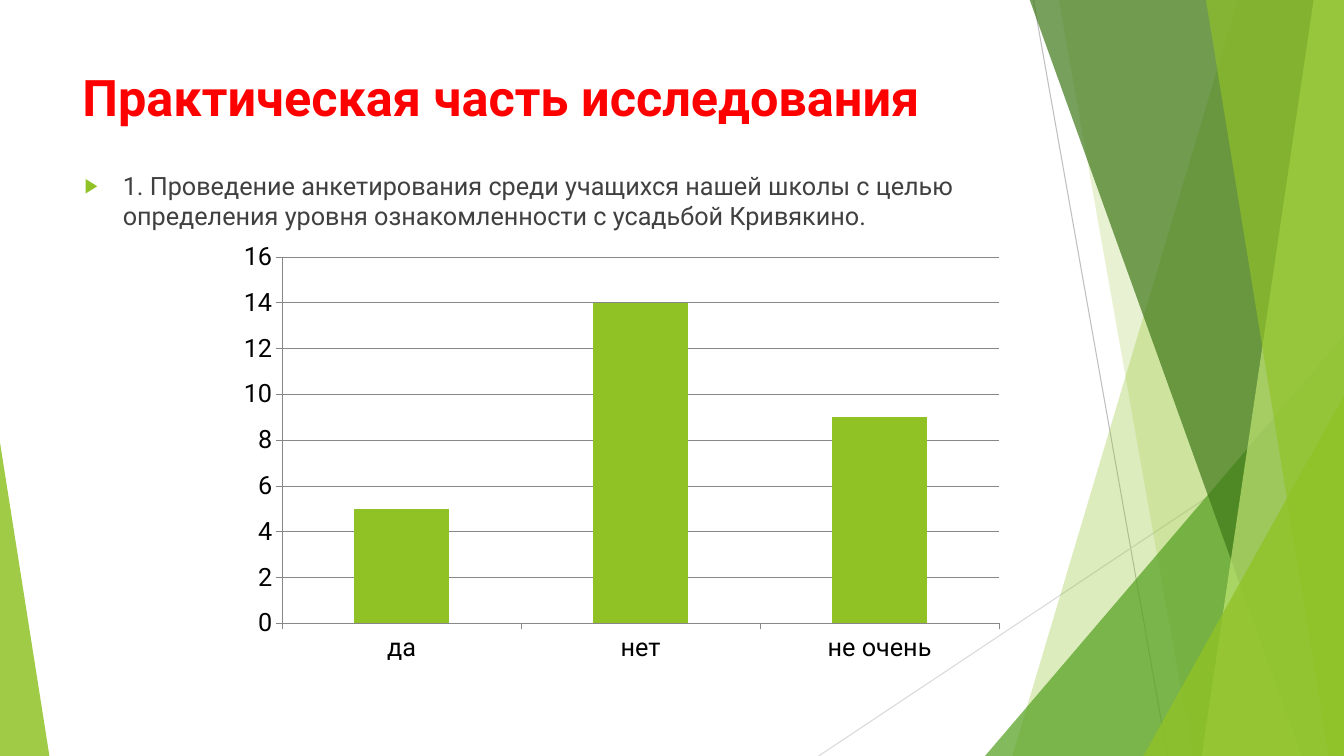
from lxml import etree
from pptx import Presentation
from pptx.chart.data import CategoryChartData
from pptx.dml.color import RGBColor
from pptx.enum.chart import XL_CHART_TYPE, XL_TICK_MARK
from pptx.enum.shapes import MSO_CONNECTOR, MSO_SHAPE
from pptx.enum.text import MSO_ANCHOR
from pptx.oxml import parse_xml
from pptx.oxml.ns import nsdecls, qn
from pptx.util import Inches, Pt

FONT = "Roboto"
WIDTH, HEIGHT, TOP = 13.33, 7.5, -0.01
COLORS = {
    "lime": "90C226", "green": "54A021", "dark_green": "3F7819",
    "pale_lime": "C0E474", "red": "FF0000", "text": "404040",
    "black": "000000", "axis": "878787",
    "line": "BFBFBF", "light_line": "D9D9D9",
}


def rgb(name):
    return RGBColor.from_string(COLORS[name])


def style_facet(shape, color, opacity):
    """Give a decorative shape a translucent fill without outline or shadow."""
    shape.shadow.inherit = False
    shape.line.fill.background()
    shape.fill.solid()
    shape.fill.fore_color.rgb = rgb(color)
    color_element = shape.fill._xPr.find(".//" + qn("a:srgbClr"))
    alpha = etree.SubElement(color_element, qn("a:alpha"))
    alpha.set("val", str(opacity * 1000))


def add_thin_line(slide, start, end, color):
    connector = slide.shapes.add_connector(
        MSO_CONNECTOR.STRAIGHT, *(Inches(value) for value in start + end))
    connector.line.color.rgb = rgb(color)
    connector.line.width = Pt(0.75)
    etree.SubElement(connector._element.spPr, qn("a:effectLst"))


def add_edge_facet(slide, top_x, bottom_x, color, opacity):
    """Fill the area between a slanted edge and the right side of the slide."""
    corners = [(top_x, TOP), (WIDTH, TOP), (WIDTH, HEIGHT), (bottom_x, HEIGHT)]
    points = [(Inches(x), Inches(y)) for x, y in corners]
    builder = slide.shapes.build_freeform(*points[0])
    builder.add_line_segments(points[1:], close=True)
    style_facet(builder.convert_to_shape(), color, opacity)


def add_corner_triangle(slide, left, top, width, apex, color, opacity):
    """Add a triangle standing on the lower edge of the slide."""
    shape = slide.shapes.add_shape(
        MSO_SHAPE.ISOSCELES_TRIANGLE, Inches(left), Inches(top),
        Inches(width), Inches(HEIGHT - top))
    shape.adjustments[0] = apex
    style_facet(shape, color, opacity)


def add_decoration(slide):
    add_thin_line(slide, (10.25, 0), (11.58, HEIGHT), "line")
    add_thin_line(slide, (WIDTH, 4.03), (8.12, HEIGHT), "light_line")
    add_edge_facet(slide, 12.28, 10.04, "lime", 30)
    add_edge_facet(slide, 10.5, 11.83, "lime", 20)
    add_corner_triangle(slide, 9.77, 3.33, 3.56, 1, "green", 72)
    add_edge_facet(slide, 10.21, 12.91, "dark_green", 70)
    add_edge_facet(slide, 13.03, 11.92, "pale_lime", 70)
    add_edge_facet(slide, 11.96, 13.18, "lime", 65)
    add_corner_triangle(slide, 11.34, 3.93, 1.99, 1, "lime", 80)
    add_corner_triangle(slide, 0, 4.39, 0.49, 0, "lime", 85)


def add_text(slide, text, left, top, width, height, size, color, bold=False):
    text_box = slide.shapes.add_textbox(
        Inches(left), Inches(top), Inches(width), Inches(height))
    text_frame = text_box.text_frame
    text_frame.word_wrap = True
    text_frame.vertical_anchor = MSO_ANCHOR.TOP
    text_frame.text = text
    paragraph = text_frame.paragraphs[0]
    font = paragraph.runs[0].font
    font.name, font.size, font.bold = FONT, Pt(size), bold
    font.color.rgb = rgb(color)
    return paragraph


def add_bullet(paragraph):
    paragraph.space_before = Pt(10)
    properties = paragraph._p.get_or_add_pPr()
    properties.set("marL", str(Inches(0.38)))
    properties.set("indent", str(Inches(-0.38)))
    for xml in (
        f'<a:buClr {nsdecls("a")}><a:srgbClr val="{COLORS["lime"]}"/></a:buClr>',
        f'<a:buSzPct {nsdecls("a")} val="80000"/>',
        f'<a:buFont {nsdecls("a")} typeface="Arial"/>',
        f'<a:buChar {nsdecls("a")} char="▶"/>',
    ):
        properties.append(parse_xml(xml))


def set_plot_area(chart, x, y, width, height):
    """Fix the inner plot area as fractions of the chart frame."""
    plot_area = chart._chartSpace.chart.plotArea
    for layout in plot_area.findall(qn("c:layout")):
        plot_area.remove(layout)
    plot_area.insert(0, parse_xml(
        f'<c:layout {nsdecls("c")}><c:manualLayout>'
        '<c:layoutTarget val="inner"/><c:xMode val="edge"/><c:yMode val="edge"/>'
        f'<c:x val="{x}"/><c:y val="{y}"/><c:w val="{width}"/><c:h val="{height}"/>'
        '</c:manualLayout></c:layout>'))


def add_survey_chart(slide):
    data = CategoryChartData()
    data.categories = ["да", "нет", "не очень"]
    data.add_series("Series 1", [5, 14, 9])
    chart = slide.shapes.add_chart(
        XL_CHART_TYPE.COLUMN_CLUSTERED, Inches(2.22), Inches(0.79),
        Inches(8.89), Inches(5.93), data).chart
    chart.has_legend = False
    chart.has_title = False
    chart.font.name, chart.font.size = FONT, Pt(18)
    chart.font.color.rgb = rgb("black")
    set_plot_area(chart, 0.065, 0.297, 0.8, 0.613)

    plot = chart.plots[0]
    plot.gap_width = 150
    plot.vary_by_categories = False
    series = plot.series[0]
    series.format.fill.solid()
    series.format.fill.fore_color.rgb = rgb("lime")

    value_axis = chart.value_axis
    value_axis.minimum_scale, value_axis.maximum_scale = 0, 16
    value_axis.major_unit = 2
    value_axis.has_major_gridlines = True
    for axis in (chart.category_axis, value_axis):
        axis.major_tick_mark = XL_TICK_MARK.OUTSIDE
    for lined in (chart.category_axis, value_axis, value_axis.major_gridlines):
        lined.format.line.color.rgb = rgb("axis")
        lined.format.line.width = Pt(0.75)


def main():
    presentation = Presentation()
    presentation.slide_width = Inches(WIDTH)
    presentation.slide_height = Inches(HEIGHT)
    slide = presentation.slides.add_slide(presentation.slide_layouts[6])
    add_decoration(slide)
    add_text(slide, "Практическая часть исследования",
             0.72, 0.61, 9.4, 1.44, 36, "red", bold=True)
    aim = add_text(
        slide,
        "1. Проведение анкетирования среди учащихся нашей школы с целью "
        "определения уровня ознакомленности с усадьбой Кривякино.",
        0.74, 1.64, 9.4, 4.97, 18, "text")
    add_bullet(aim)
    add_survey_chart(slide)
    presentation.save("out.pptx")


if __name__ == "__main__":
    main()
